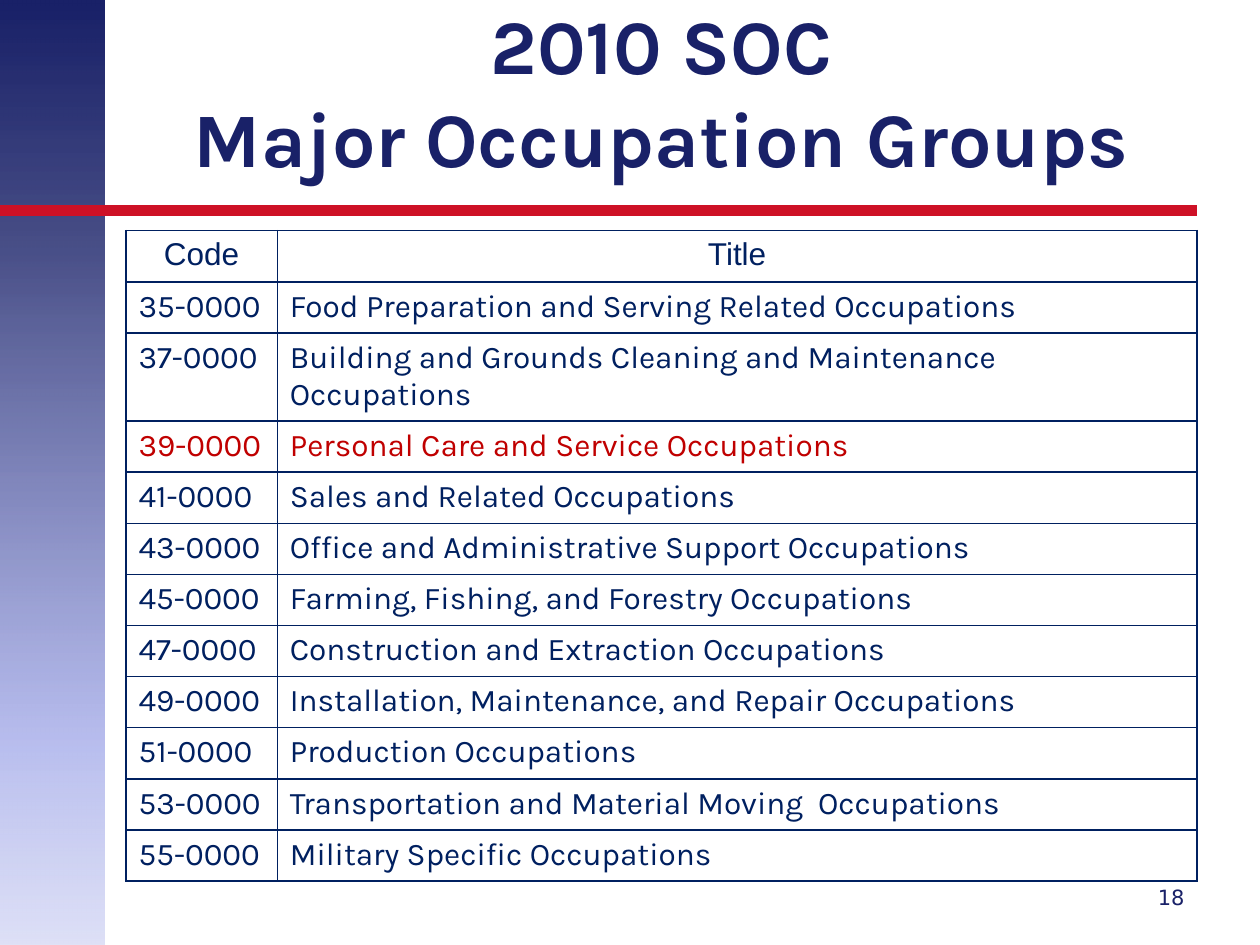
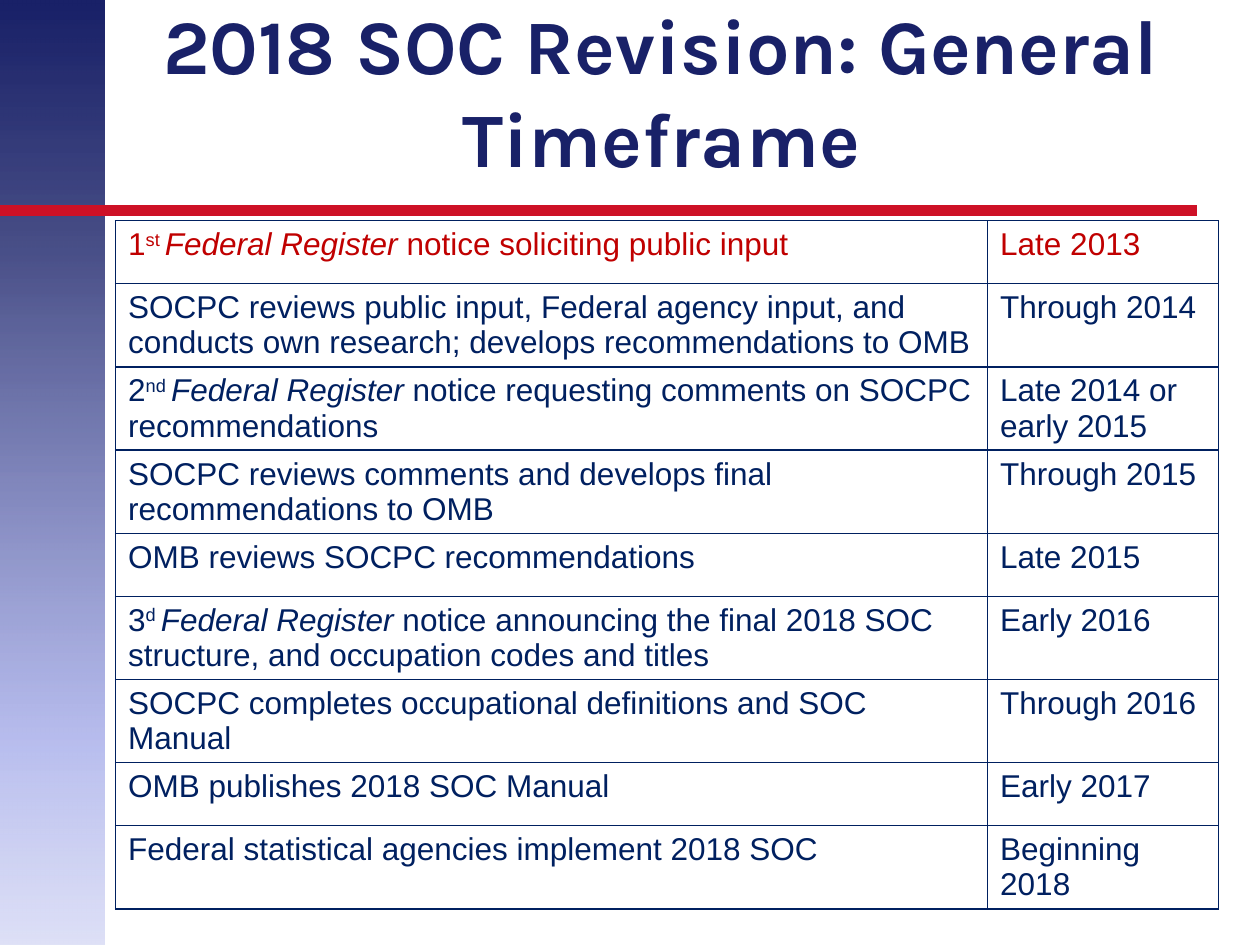
from dataclasses import dataclass
from lxml.etree import SubElement
from pptx import Presentation
from pptx.dml.color import RGBColor
from pptx.enum.shapes import MSO_CONNECTOR, MSO_SHAPE
from pptx.enum.text import MSO_ANCHOR, MSO_AUTO_SIZE, PP_ALIGN
from pptx.oxml.ns import qn
from pptx.util import Cm, Pt


@dataclass(frozen=True)
class Theme:
    navy: str = "192168"
    table_navy: str = "002060"
    highlight: str = "C00000"
    rule_red: str = "CE1126"
    white: str = "FFFFFF"
    # position %, colour, opacity %
    band_stops: tuple = ((0, "192168", 100), (26, "192168", 79),
                         (78, "969EE6", 68), (100, "CACEF2", 61))
    heading_font: str = "Karla"
    plain_font: str = "Arial"
    number_font: str = "DejaVu Sans"
    title_size: int = 44
    table_size: int = 18
    number_size: int = 12


theme = Theme()


def write_text(frame, content, size, font, color, bold=False, align=PP_ALIGN.LEFT):
    """Content is a string or a list of (text, style); style is "", "super" or "italic"."""
    parts = [(content, "")] if isinstance(content, str) else content
    paragraph = frame.paragraphs[0]
    paragraph.alignment = align
    for words, style in parts:
        for index, line in enumerate(words.split("\n")):
            if index:
                paragraph.add_line_break()
            run = paragraph.add_run()
            run.text = line
            run.font.size = Pt(size)
            run.font.name = font
            run.font.bold = bold
            run.font.italic = style == "italic"
            run.font.color.rgb = RGBColor.from_string(color)
            if style == "super":
                run._r.get_or_add_rPr().set("baseline", "30000")


def add_borders(cell, color, width):
    properties = cell._tc.get_or_add_tcPr()
    for side in ("lnL", "lnR", "lnT", "lnB"):
        border = SubElement(properties, qn(f"a:{side}"), w=str(Pt(width)))
        fill = SubElement(border, qn("a:solidFill"))
        SubElement(fill, qn("a:srgbClr"), val=color)


register = ("Federal Register", "italic")

occupation_rows = [
    ("Code", "Title"),
    ("35-0000", "Food Preparation and Serving Related Occupations"),
    ("37-0000", "Building and Grounds Cleaning and Maintenance Occupations"),
    ("39-0000", "Personal Care and Service Occupations"),
    ("41-0000", "Sales and Related Occupations"),
    ("43-0000", "Office and Administrative Support Occupations"),
    ("45-0000", "Farming, Fishing, and Forestry Occupations"),
    ("47-0000", "Construction and Extraction Occupations"),
    ("49-0000", "Installation, Maintenance, and Repair Occupations"),
    ("51-0000", "Production Occupations"),
    ("53-0000", "Transportation and Material Moving  Occupations"),
    ("55-0000", "Military Specific Occupations"),
]

timeframe_rows = [
    ([("1", ""), ("st ", "super"), register,
      (" notice soliciting public input", "")], "Late 2013"),
    ("SOCPC reviews public input, Federal agency input, and conducts own research; "
     "develops recommendations to OMB", "Through 2014"),
    ([("2", ""), ("nd ", "super"), register,
      (" notice requesting comments on SOCPC recommendations", "")],
     "Late 2014 or early 2015"),
    ("SOCPC reviews comments and develops final recommendations to OMB", "Through 2015"),
    ("OMB reviews SOCPC recommendations", "Late 2015"),
    ([("3", ""), ("d ", "super"), register,
      (" notice announcing the final 2018 SOC structure, and occupation codes and titles", "")],
     "Early 2016"),
    ("SOCPC completes occupational definitions and SOC Manual", "Through 2016"),
    ("OMB publishes 2018 SOC Manual", "Early 2017"),
    ("Federal statistical agencies implement 2018 SOC", "Beginning 2018"),
]

# Lengths in centimetres
pages = [
    dict(title="2010 SOC\nMajor Occupation Groups", number="18", rows=occupation_rows,
         left=2.54, top=4.65, columns=(3.05, 18.54), row_height=1.03,
         font=theme.heading_font, has_header=True, highlighted=3, fill=None),
    dict(title="2018 SOC Revision: General Timeframe", number=None, rows=timeframe_rows,
         left=2.33, top=4.45, columns=(17.58, 4.65), row_height=1.27,
         font=theme.plain_font, has_header=False, highlighted=0, fill=theme.white),
]

deck = Presentation()
deck.slide_width, deck.slide_height = Cm(25.4), Cm(19.05)
title_only = deck.slide_layouts[5]

for page in pages:
    slide = deck.slides.add_slide(title_only)
    shapes = slide.shapes

    # Side band and red rule
    band = shapes.add_shape(MSO_SHAPE.RECTANGLE, 0, 0, Cm(2.11), deck.slide_height)
    band.shadow.inherit = False
    band.line.fill.background()
    band.fill.gradient()
    band.fill.gradient_angle = 270
    stops = band._element.spPr.find(qn("a:gradFill")).find(qn("a:gsLst"))
    for old_stop in list(stops):
        stops.remove(old_stop)
    for position, color, opacity in theme.band_stops:
        stop = SubElement(stops, qn("a:gs"), pos=str(position * 1000))
        stop_color = SubElement(stop, qn("a:srgbClr"), val=color)
        SubElement(stop_color, qn("a:alpha"), val=str(opacity * 1000))

    rule = shapes.add_connector(MSO_CONNECTOR.STRAIGHT, 0, Cm(4.24), Cm(24.13), Cm(4.24))
    rule.line.color.rgb = RGBColor.from_string(theme.rule_red)
    rule.line.width = Pt(6)
    SubElement(rule._element.spPr, qn("a:effectLst"))

    # Title
    heading = shapes.title
    heading.left, heading.top, heading.width, heading.height = (
        Cm(2.54), Cm(0.76), Cm(21.59), Cm(3.05))
    heading.text_frame.auto_size = MSO_AUTO_SIZE.NONE
    heading.text_frame.vertical_anchor = MSO_ANCHOR.BOTTOM
    write_text(heading.text_frame, page["title"], size=theme.title_size,
               font=theme.heading_font, color=theme.navy, bold=True, align=PP_ALIGN.CENTER)

    # Page number
    if page["number"]:
        page_number = shapes.add_textbox(Cm(22.22), Cm(17.58), Cm(1.91), Cm(1.02)).text_frame
        page_number.word_wrap = True
        page_number.vertical_anchor = MSO_ANCHOR.MIDDLE
        write_text(page_number, page["number"], size=theme.number_size,
                   font=theme.number_font, color=theme.navy, align=PP_ALIGN.RIGHT)

    # Table
    rows, columns = page["rows"], page["columns"]
    table = shapes.add_table(len(rows), len(columns), Cm(page["left"]), Cm(page["top"]),
                             Cm(sum(columns)), Cm(page["row_height"] * len(rows))).table
    table.first_row = table.horz_banding = False
    for column, width in zip(table.columns, columns):
        column.width = Cm(width)
    for row_index, entries in enumerate(rows):
        is_header = page["has_header"] and row_index == 0
        is_highlighted = row_index == page["highlighted"]
        for column_index, entry in enumerate(entries):
            cell = table.cell(row_index, column_index)
            add_borders(cell, theme.table_navy, 1)
            if page["fill"]:
                cell.fill.solid()
                cell.fill.fore_color.rgb = RGBColor.from_string(page["fill"])
            else:
                cell.fill.background()
            write_text(cell.text_frame, entry, size=theme.table_size,
                       font=theme.plain_font if is_header else page["font"],
                       color=theme.highlight if is_highlighted else theme.table_navy,
                       align=PP_ALIGN.CENTER if is_header else PP_ALIGN.LEFT)

deck.save("out.pptx")
